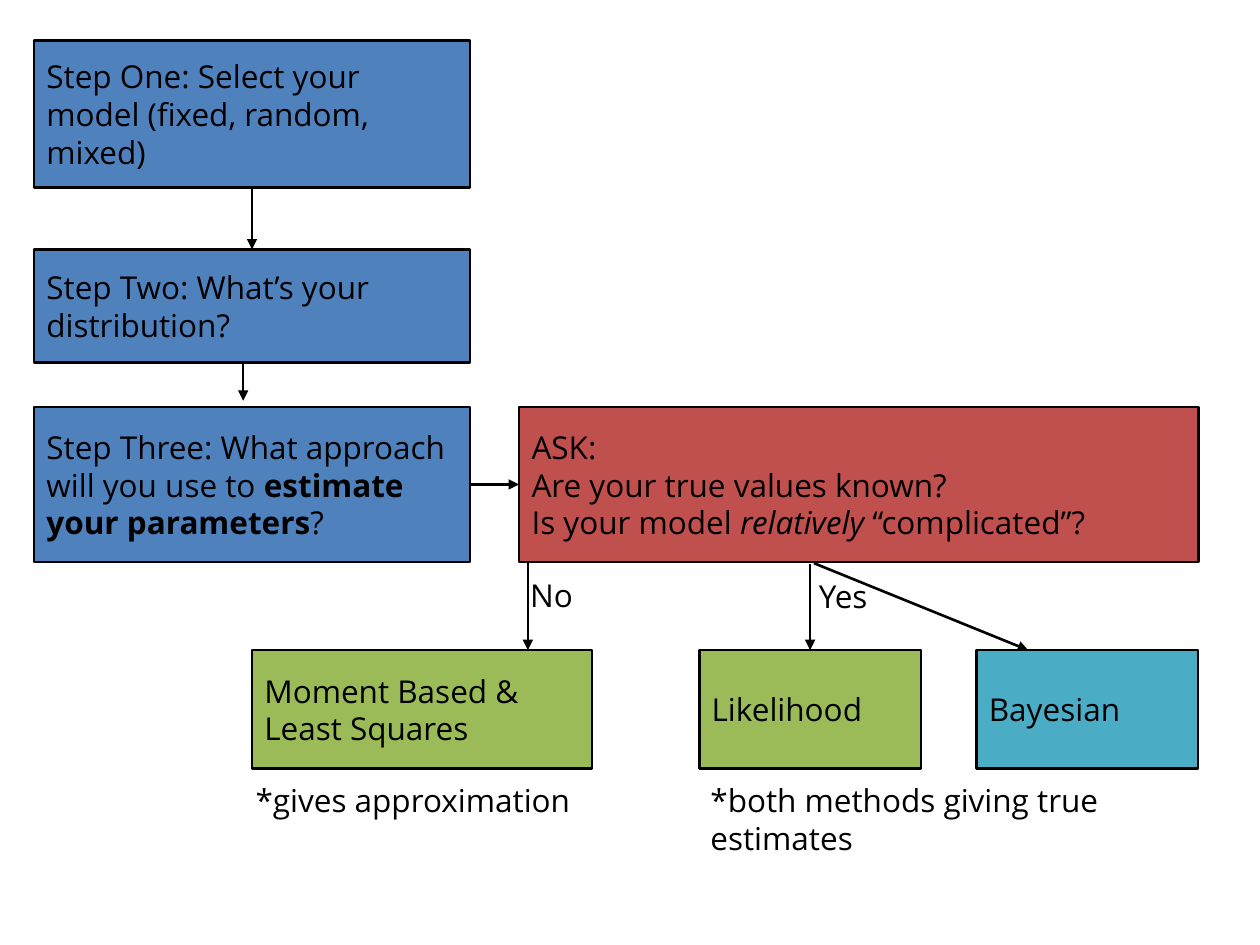
from lxml import etree
from pptx import Presentation
from pptx.dml.color import RGBColor
from pptx.enum import shapes, text
from pptx.oxml.ns import qn
from pptx.util import Inches, Pt

BLACK = RGBColor(0x00, 0x00, 0x00)
BLUE = RGBColor(0x4F, 0x81, 0xBD)
RED = RGBColor(0xC0, 0x50, 0x4D)
GREEN = RGBColor(0x9B, 0xBB, 0x59)
TEAL = RGBColor(0x4B, 0xAC, 0xC6)
FONT = "Open Sans"

STEP_LEFT, STEP_WIDTH = 0.27, 3.46
ASK_TOP, ASK_HEIGHT = 3.23, 1.23
METHOD_TOP, METHOD_HEIGHT = 5.16, 0.94
NOTE_TOP = METHOD_TOP + METHOD_HEIGHT

BOXES = {
    "model": (STEP_LEFT, 0.32, STEP_WIDTH, 1.17, BLUE,
              [[("Step One: Select your model (fixed, random, mixed)", "")]]),
    "distribution": (STEP_LEFT, 1.98, STEP_WIDTH, 0.9, BLUE,
                     [[("Step Two: What’s your distribution?", "")]]),
    "approach": (STEP_LEFT, ASK_TOP, STEP_WIDTH, ASK_HEIGHT, BLUE,
                 [[("Step Three: What approach will you use to ", ""),
                   ("estimate your parameters", "bold"), ("?", "")]]),
    "ask": (4.12, ASK_TOP, 5.39, ASK_HEIGHT, RED,
            [[("ASK:", "")],
             [("Are your true values known?", "")],
             [("Is your model ", ""), ("relatively", "italic"), (" “complicated”?", "")]]),
    "moments": (2, METHOD_TOP, 2.7, METHOD_HEIGHT, GREEN,
                [[("Moment Based & Least Squares", "")]]),
    "likelihood": (5.55, METHOD_TOP, 1.76, METHOD_HEIGHT, GREEN, [[("Likelihood", "")]]),
    "bayesian": (7.75, METHOD_TOP, 1.76, METHOD_HEIGHT, TEAL, [[("Bayesian", "")]]),
}

ARROWS = [
    ((2, 1.49), (2, 1.98), ("model", 2), ("distribution", 0)),
    ((1.93, 2.89), (1.93, 3.18), None, None),
    ((3.73, 3.85), (4.12, 3.85), ("approach", 3), ("ask", 1)),
    ((4.19, 4.47), (4.19, METHOD_TOP), None, None),
    ((6.43, 4.48), (6.43, METHOD_TOP), None, ("likelihood", 0)),
    ((6.46, 4.47), (8.16, METHOD_TOP), None, None),
]

LABELS = [
    (4.11, 4.47, 0.59, 0.29, "No"),
    (6.4, 4.48, 0.74, 0.28, "Yes"),
    (1.93, NOTE_TOP, 3.22, 0.45, "*gives approximation"),
    (5.54, NOTE_TOP, 3.94, 0.29, "*both methods giving true estimates"),
]


def write(frame, paragraphs, anchor):
    frame.word_wrap = True
    frame.auto_size = text.MSO_AUTO_SIZE.NONE
    frame.vertical_anchor = anchor
    frame.margin_left = frame.margin_right = Inches(0.1)
    frame.margin_top = frame.margin_bottom = Inches(0.1)
    for index, pieces in enumerate(paragraphs):
        paragraph = frame.paragraphs[0] if index == 0 else frame.add_paragraph()
        paragraph.alignment = text.PP_ALIGN.LEFT
        for words, style in pieces:
            run = paragraph.add_run()
            run.text = words
            run.font.name = FONT
            run.font.size = Pt(18)
            run.font.color.rgb = BLACK
            run.font.bold = style == "bold"
            run.font.italic = style == "italic"


def add_box(slide, left, top, width, height, fill, paragraphs):
    box = slide.shapes.add_shape(shapes.MSO_SHAPE.RECTANGLE, Inches(left), Inches(top),
                                 Inches(width), Inches(height))
    box.shadow.inherit = False
    box.fill.solid()
    box.fill.fore_color.rgb = fill
    box.line.color.rgb = BLACK
    box.line.width = Pt(1.5)
    write(box.text_frame, paragraphs, text.MSO_ANCHOR.MIDDLE)
    return box


def add_arrow(slide, boxes, start, end, source, target):
    arrow = slide.shapes.add_connector(shapes.MSO_CONNECTOR.STRAIGHT,
                                       *map(Inches, start + end))
    if source:
        arrow.begin_connect(boxes[source[0]], source[1])
    if target:
        arrow.end_connect(boxes[target[0]], target[1])
    arrow.line.color.rgb = BLACK
    arrow.line.width = Pt(1.5)
    properties = arrow.element.spPr
    etree.SubElement(properties.find(qn("a:ln")), qn("a:tailEnd"), type="triangle")
    etree.SubElement(properties, qn("a:effectLst"))


def main():
    deck = Presentation()
    deck.slide_width, deck.slide_height = Inches(10), Inches(7.5)
    slide = deck.slides.add_slide(deck.slide_layouts[6])
    boxes = {key: add_box(slide, *box) for key, box in BOXES.items()}
    for arrow in ARROWS:
        add_arrow(slide, boxes, *arrow)
    for left, top, width, height, words in LABELS:
        label = slide.shapes.add_textbox(Inches(left), Inches(top),
                                         Inches(width), Inches(height))
        write(label.text_frame, [[(words, "")]], text.MSO_ANCHOR.TOP)
    deck.save("out.pptx")


if __name__ == "__main__":
    main()
